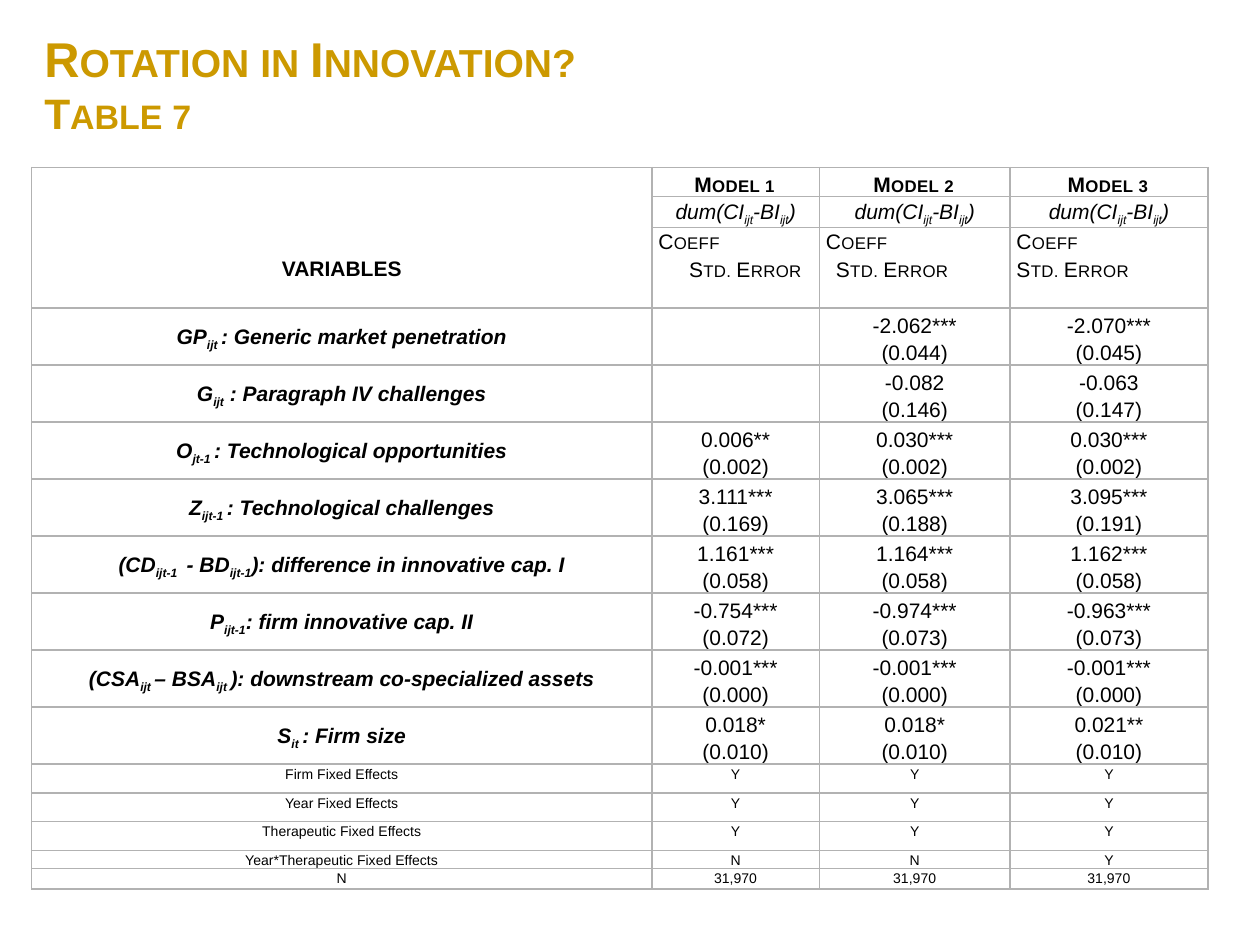
from dataclasses import dataclass

from lxml import etree
from pptx import Presentation
from pptx.dml.color import RGBColor
from pptx.enum.text import MSO_ANCHOR, PP_ALIGN
from pptx.oxml.ns import qn
from pptx.util import Cm, Pt

LEFT, CENTER = PP_ALIGN.LEFT, PP_ALIGN.CENTER
TOP, MIDDLE, BOTTOM = MSO_ANCHOR.TOP, MSO_ANCHOR.MIDDLE, MSO_ANCHOR.BOTTOM


@dataclass(frozen=True)
class Theme:
    font: str = "Arial"
    gold: RGBColor = RGBColor(0xCC, 0x99, 0x00)
    black: RGBColor = RGBColor(0, 0, 0)
    border: str = "B2B2B2"
    title: float = 27.9
    subtitle: float = 24.3
    body: float = 12
    small: float = 8


theme = Theme()


def add_text(cell, lines, anchor=MIDDLE, size=theme.body, bold=False,
             italic=False, caps=False, align=CENTER):
    """Write one paragraph per line; every second piece between bars is a subscript."""
    cell.vertical_anchor = anchor
    tf = cell.text_frame
    for i, line in enumerate(lines):
        p = tf.paragraphs[0] if i == 0 else tf.add_paragraph()
        p.alignment = align
        p.line_spacing = 1.15
        p.font.name = theme.font
        p.font.size = Pt(size)
        p.font.bold = bold
        p.font.italic = italic
        p.font.color.rgb = theme.black
        for j, piece in enumerate(line.split("|")):
            r = p.add_run()
            r.text = piece
            rPr = r._r.get_or_add_rPr()
            if j % 2:
                rPr.set("baseline", "-25000")
            if caps:
                rPr.set("cap", "small")
                rPr.set("spc", "20")


def style_cell(cell):
    """Clear the fill, set the margins and draw a thin border on all sides."""
    cell.margin_left = cell.margin_right = Cm(0.13)
    cell.margin_top = cell.margin_bottom = 0
    cell.fill.background()
    tcPr = cell._tc.get_or_add_tcPr()
    for i, side in enumerate(("lnL", "lnR", "lnT", "lnB")):
        ln = etree.Element(qn(f"a:{side}"), w=str(Pt(1)))
        fill = etree.SubElement(ln, qn("a:solidFill"))
        etree.SubElement(fill, qn("a:srgbClr"), val=theme.border)
        tcPr.insert(i, ln)


prs = Presentation()
prs.slide_width, prs.slide_height = Cm(25.4), Cm(19.05)
s = prs.slides.add_slide(prs.slide_layouts[5])

# Title
title = s.shapes.title
title.left, title.top, title.width, title.height = Cm(0.64), Cm(0.58), Cm(24.97), Cm(2.8)
tf = title.text_frame
tf.word_wrap = True
tf.vertical_anchor = TOP
tf.margin_top = 0
p = tf.paragraphs[0]
p.alignment = LEFT
p.font.name = theme.font
p.font.bold = True
p.font.color.rgb = theme.gold
for i, (text, size) in enumerate((("Rotation in Innovation?", theme.title),
                                  ("Table 7", theme.subtitle))):
    if i:
        p.add_line_break()
    r = p.add_run()
    r.text = text
    r.font.size = Pt(size)
    r._r.get_or_add_rPr().set("cap", "small")

# Table contents
variables = [
    ("GP|ijt |: Generic market penetration",
     ["", "-2.062*** (0.044)", "-2.070*** (0.045)"]),
    ("G|ijt| : Paragraph IV challenges",
     ["", "-0.082 (0.146)", "-0.063 (0.147)"]),
    ("O|jt-1 |: Technological opportunities",
     ["0.006** (0.002)", "0.030*** (0.002)", "0.030*** (0.002)"]),
    ("Z|ijt-1 |: Technological challenges",
     ["3.111*** (0.169)", "3.065*** (0.188)", "3.095*** (0.191)"]),
    ("(CD|ijt-1 | - BD|ijt-1|): difference in innovative cap. I",
     ["1.161*** (0.058)", "1.164*** (0.058)", "1.162*** (0.058)"]),
    ("P|ijt-1|: firm innovative cap. II",
     ["-0.754*** (0.072)", "-0.974*** (0.073)", "-0.963*** (0.073)"]),
    ("(CSA|ijt |– BSA|ijt |): downstream co-specialized assets",
     ["-0.001*** (0.000)", "-0.001*** (0.000)", "-0.001*** (0.000)"]),
    ("S|it |: Firm size",
     ["0.018* (0.010)", "0.018* (0.010)", "0.021** (0.010)"]),
]
controls = [
    ("Firm Fixed Effects", "Y", "Y", "Y"),
    ("Year Fixed Effects", "Y", "Y", "Y"),
    ("Therapeutic Fixed Effects", "Y", "Y", "Y"),
    ("Year*Therapeutic Fixed Effects", "N", "N", "Y"),
    ("N", "31,970", "31,970", "31,970"),
]
error_indents = (Cm(0.62), Cm(0.2), 0)

# Table grid
col_widths = [12.5, 3.38, 3.84, 3.99]
row_heights = [0.58, 0.62, 1.63] + [1.15] * len(variables) + [0.58] * 3 + [0.36, 0.41]
table = s.shapes.add_table(len(row_heights), len(col_widths), Cm(0.64), Cm(3.38),
                           Cm(sum(col_widths)), Cm(sum(row_heights))).table
table.first_row = table.horz_banding = False
for col, width in zip(table.columns, col_widths):
    col.width = Cm(width)
for row, height in zip(table.rows, row_heights):
    row.height = Cm(height)
for cell in table.iter_cells():
    style_cell(cell)

# Header rows
corner = table.cell(0, 0)
corner.merge(table.cell(2, 0))
corner.margin_bottom = Cm(0.55)
add_text(corner, ["VARIABLES"], BOTTOM, bold=True)
for c, indent in enumerate(error_indents, 1):
    add_text(table.cell(0, c), [f"Model {c}"], BOTTOM, bold=True, caps=True)
    add_text(table.cell(1, c), ["dum(CI|ijt|-BI|ijt|)"], italic=True)
    labels = table.cell(2, c)
    add_text(labels, ["Coeff", "Std. Error"], TOP, caps=True, align=LEFT)
    labels.text_frame.paragraphs[1]._p.get_or_add_pPr().set("marL", str(indent))

# Coefficients with standard errors
for row, (name, estimates) in enumerate(variables, 3):
    add_text(table.cell(row, 0), [name], bold=True, italic=True)
    for c, estimate in enumerate(estimates, 1):
        add_text(table.cell(row, c), estimate.split(), BOTTOM)

# Fixed effects and sample size
for row, values in enumerate(controls, 3 + len(variables)):
    for c, value in enumerate(values):
        add_text(table.cell(row, c), [value], TOP, size=theme.small)

prs.save("out.pptx")
